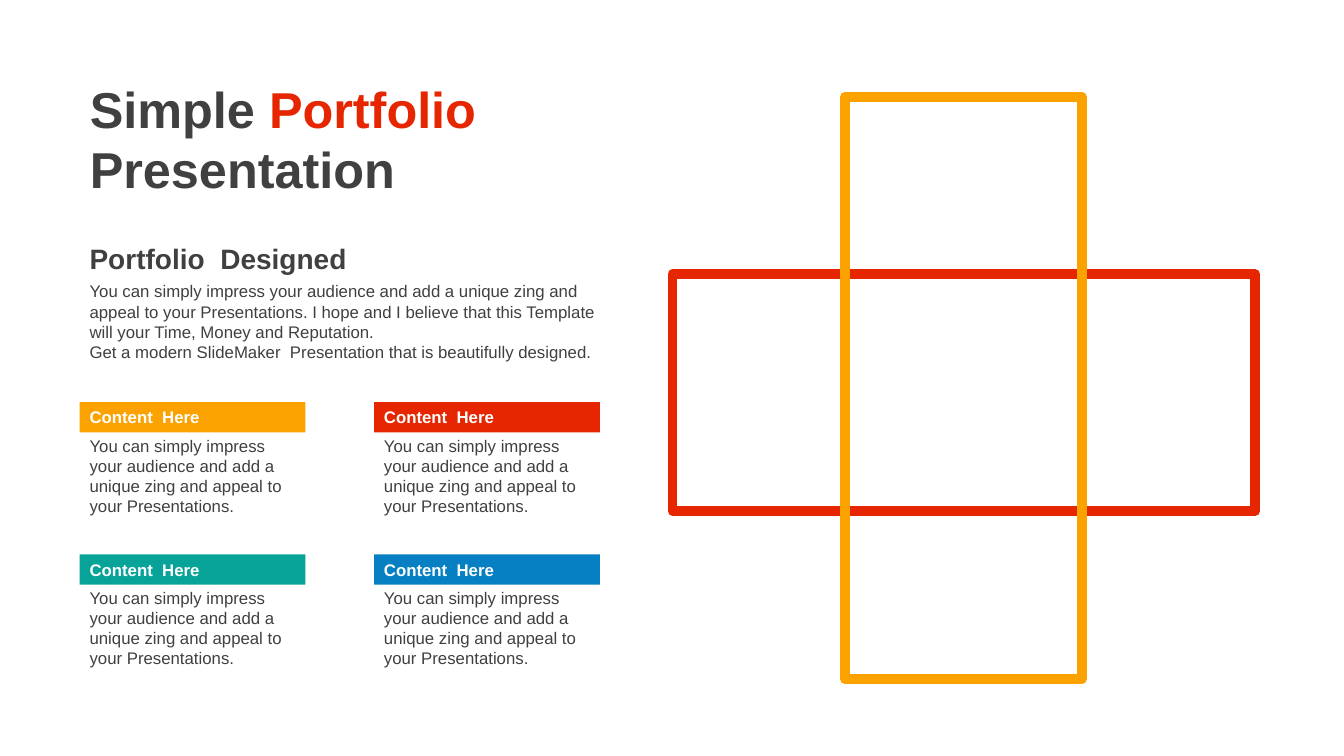
"""Build a portfolio slide with a heading, four content cards and two crossed frames."""
import dataclasses
import itertools
import typing

import pptx
import pptx.dml.color
import pptx.enum.shapes
import pptx.enum.text
import pptx.presentation
import pptx.shapes.autoshape
import pptx.slide
import pptx.util

RGB = pptx.dml.color.RGBColor
ANCHOR = pptx.enum.text.MSO_ANCHOR
ALIGN = pptx.enum.text.PP_ALIGN

DARK = RGB(0x40, 0x40, 0x40)
WHITE = RGB(0xFF, 0xFF, 0xFF)
RED = RGB(0xE6, 0x26, 0x01)
ORANGE = RGB(0xFB, 0xA2, 0x00)
TEAL = RGB(0x07, 0xA3, 0x98)
BLUE = RGB(0x06, 0x80, 0xC3)

PX = 9144
TITLE = {"size": pptx.util.Pt(36), "bold": True}
HEADING = {"size": pptx.util.Pt(20), "bold": True}
LABEL = {"size": pptx.util.Pt(12), "bold": True}
BODY = {"size": pptx.util.Pt(12), "bold": False}

CARD_TEXT = "You can simply impress your audience and add a unique zing and appeal to your Presentations."
INTRO = (
    "You can simply impress your audience and add a unique zing and appeal to your "
    "Presentations. I hope and I believe that this Template will your Time, Money and Reputation.",
    "Get a modern SlideMaker  Presentation that is beautifully designed.",
)


class Run(typing.NamedTuple):
    text: str
    color: RGB = DARK


@dataclasses.dataclass(frozen=True)
class Box:
    left: int
    top: int
    width: int
    height: int

    def emu(self) -> list[int]:
        return [v * PX for v in dataclasses.astuple(self)]


@dataclasses.dataclass(frozen=True)
class Frame:
    box: Box
    color: RGB


@dataclasses.dataclass(frozen=True)
class Card:
    left: int
    top: int
    color: RGB


FRAMES = (
    Frame(Box(667, 272, 578, 235), RED),
    Frame(Box(838, 96, 235, 578), ORANGE),
)
CARDS = [
    Card(left, top, color)
    for (top, left), color in zip(
        itertools.product((399, 550), (79, 371)), (ORANGE, RED, TEAL, BLUE)
    )
]


def write(
    tf: pptx.text.text.TextFrame,
    paragraphs: list[list[Run]],
    style: dict[str, typing.Any],
    anchor: ANCHOR = ANCHOR.TOP,
) -> None:
    layout = {
        "word_wrap": True,
        "auto_size": pptx.enum.text.MSO_AUTO_SIZE.NONE,
        "vertical_anchor": anchor,
    }
    for name, value in layout.items():
        setattr(tf, name, value)
    for i, runs in enumerate(paragraphs):
        p = tf.add_paragraph() if i else tf.paragraphs[0]
        p.alignment = ALIGN.LEFT
        for run in runs:
            r = p.add_run()
            r.text = run.text
            r.font.color.rgb = run.color
            for name, value in {"name": "Arial", **style}.items():
                setattr(r.font, name, value)


def add_text(
    s: pptx.slide.Slide,
    box: Box,
    lines: typing.Iterable[str],
    style: dict[str, typing.Any],
    anchor: ANCHOR = ANCHOR.TOP,
) -> pptx.text.text.TextFrame:
    tf = s.shapes.add_textbox(*box.emu()).text_frame
    write(tf, [[Run(line)] for line in lines], style, anchor)
    return tf


def add_rect(s: pptx.slide.Slide, box: Box) -> pptx.shapes.autoshape.Shape:
    sp = s.shapes.add_shape(pptx.enum.shapes.MSO_SHAPE.RECTANGLE, *box.emu())
    sp.shadow.inherit = False
    return sp


def add_frame(s: pptx.slide.Slide, frame: Frame) -> None:
    sp = add_rect(s, frame.box)
    sp.fill.background()
    sp.line.color.rgb = frame.color
    sp.line.width = pptx.util.Pt(7)


def add_card(s: pptx.slide.Slide, card: Card) -> None:
    sp = add_rect(s, Box(card.left, card.top, 224, 30))
    sp.fill.solid()
    sp.fill.fore_color.rgb = card.color
    sp.line.fill.background()
    write(sp.text_frame, [[Run("Content  Here", WHITE)]], LABEL, ANCHOR.MIDDLE)
    add_text(s, Box(card.left, card.top + 28, 224, 91), [CARD_TEXT], BODY)


def add_title(s: pptx.slide.Slide, box: Box) -> None:
    sp = s.shapes.title
    for name, value in zip(("left", "top", "width", "height"), box.emu()):
        setattr(sp, name, value)
    lines = [[Run("Simple"), Run(" Portfolio", RED)], [Run("Presentation")]]
    write(sp.text_frame, lines, TITLE)


def main() -> None:
    prs = pptx.Presentation()
    prs.slide_width, prs.slide_height = 1333 * PX, 750 * PX
    s = prs.slides.add_slide(prs.slide_layouts.get_by_name("Title Only"))
    add_title(s, Box(79, 72, 460, 131))
    for frame in FRAMES:
        add_frame(s, frame)
    tf = add_text(s, Box(79, 235, 546, 39), ["Portfolio  Designed"], HEADING, ANCHOR.MIDDLE)
    for name, value in {"line_spacing": 1.1, "space_before": pptx.util.Pt(4)}.items():
        setattr(tf.paragraphs[0], name, value)
    add_text(s, Box(79, 274, 546, 91), INTRO, BODY)
    for card in CARDS:
        add_card(s, card)
    prs.save("out.pptx")


if __name__ == "__main__":
    main()
